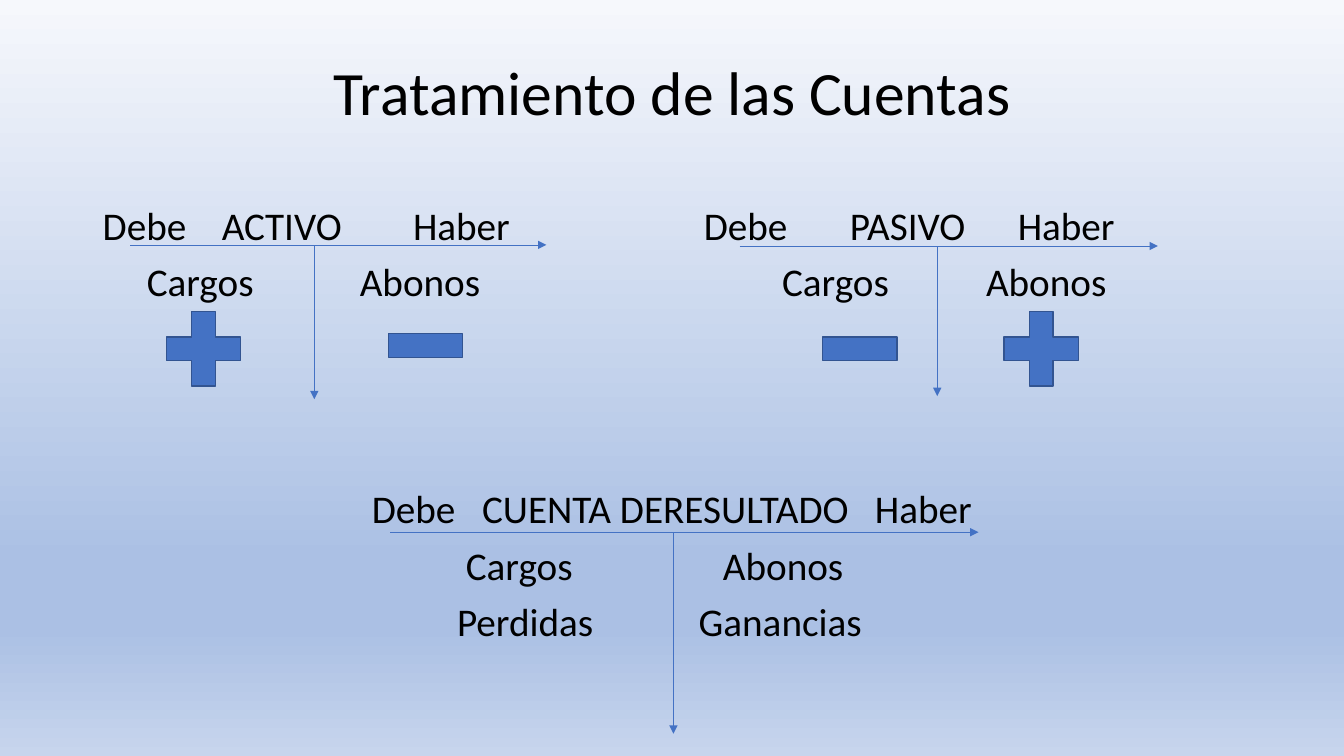
from lxml.etree import SubElement
from pptx import Presentation
from pptx.dml.color import RGBColor
from pptx.enum.shapes import MSO_CONNECTOR, MSO_SHAPE as Shape
from pptx.enum.text import MSO_ANCHOR as Anchor, PP_ALIGN as Align
from pptx.oxml.ns import qn
from pptx.util import Cm, Pt

COLORS = {"text": "000000", "accent": "4472C4", "edge": "325491"}
BACKDROP = [(0, "F6F8FC"), (74, "ABC0E4"), (83, "ABC0E4"), (100, "C7D5ED")]
BODY_LEFT, INSET = 2.34, 0.25

# Each row: space before in points, then words with their distance from the slide's left edge
ROWS = [
    (10, [(2.59, "Debe"), (5.59, "ACTIVO"), (10.41, "Haber"),
          (17.74, "Debe"), (21.42, "PASIVO"), (25.65, "Haber")]),
    (10, [(3.7, "Cargos"), (9.07, "Abonos"), (19.71, "Cargos"), (24.85, "Abonos")]),
    (132, [(9.37, "Debe"), (12.15, "CUENTA DERESULTADO"), (22.05, "Haber")]),
    (10, [(11.74, "Cargos"), (18.22, "Abonos")]),
    (10, [(11.52, "Perdidas"), (17.61, "Ganancias")]),
]
# Each account: bar left, bar right, bar height on the slide, stem position, stem end
ACCOUNTS = [
    (3.28, 13.77, 6.17, 7.92, 10.06),
    (18.64, 29.18, 6.2, 23.62, 9.98),
    (9.83, 24.66, 13.41, 16.97, 18.49),
]
SIGNS = [
    (Shape.MATH_PLUS, 3.86, 7.52), (Shape.MATH_MINUS, 9.45, 7.44),
    (Shape.MATH_PLUS, 24.97, 7.52), (Shape.MATH_MINUS, 20.4, 7.52),
]


def apply(target, values):
    for name, value in values.items():
        setattr(target, name, value)


def rgb(name):
    return RGBColor.from_string(COLORS[name])


class AccountSlide:
    font = "Calibri"

    def __init__(self, deck):
        self.page = deck.slides.add_slide(deck.slide_layouts[5])

    def background(self, stops):
        fill = self.page.background.fill
        fill.gradient()
        fill.gradient_angle = 270
        stop_list = next(self.page.element.iter(qn("a:gsLst")))
        for old in list(stop_list):
            stop_list.remove(old)
        for percent, color in stops:
            stop = SubElement(stop_list, qn("a:gs"), pos=str(percent * 1000))
            SubElement(stop, qn("a:srgbClr"), val=color)

    def add_text(self, para, text, size, before=0):
        apply(para, {"line_spacing": 0.9, "space_before": Pt(before)})
        span = para.add_run()
        span.text = text
        apply(span.font, {"name": self.font, "size": Pt(size)})
        span.font.color.rgb = rgb("text")

    def title(self, text):
        box = self.page.shapes.title
        apply(box, {"left": Cm(2.34), "top": Cm(1.02), "width": Cm(29.21), "height": Cm(2.79)})
        box.text_frame.vertical_anchor = Anchor.MIDDLE
        para = box.text_frame.paragraphs[0]
        para.alignment = Align.CENTER
        self.add_text(para, text, 44)

    def body(self, rows):
        box = self.page.shapes.add_textbox(Cm(BODY_LEFT), Cm(5.08), Cm(29.21), Cm(12.98))
        frame = box.text_frame
        frame.word_wrap = True
        for index, (before, words) in enumerate(rows):
            para = frame.add_paragraph() if index else frame.paragraphs[0]
            offsets = [round(x - BODY_LEFT - INSET, 2) for x, _ in words]
            parts = [("\t" if offset > 0 else "") + word
                     for offset, (_, word) in zip(offsets, words)]
            self.add_text(para, "".join(parts), 28, before)
            # Tab stops hold the words in their columns
            tabs = SubElement(para._p.get_or_add_pPr(), qn("a:tabLst"))
            for offset in offsets:
                if offset > 0:
                    SubElement(tabs, qn("a:tab"), pos=str(int(Cm(offset))), algn="l")

    def arrow(self, *ends):
        line = self.page.shapes.add_connector(MSO_CONNECTOR.STRAIGHT, *map(Cm, ends))
        line.line.color.rgb = rgb("accent")
        line.line.width = Pt(0.5)
        outline = line._element.spPr
        SubElement(outline.find(qn("a:ln")), qn("a:tailEnd"), type="triangle")
        SubElement(outline, qn("a:effectLst"))

    def account(self, left, right, top, stem, bottom):
        self.arrow(left, top, right, top)
        self.arrow(stem, top + 0.03, stem, bottom)

    def sign(self, kind, left, top):
        shape = self.page.shapes.add_shape(kind, Cm(left), Cm(top), Cm(2.54), Cm(2.54))
        shape.shadow.inherit = False
        shape.fill.solid()
        shape.fill.fore_color.rgb = rgb("accent")
        shape.line.color.rgb = rgb("edge")
        shape.line.width = Pt(1)


def main():
    deck = Presentation()
    apply(deck, {"slide_width": Cm(33.87), "slide_height": Cm(19.05)})
    slide = AccountSlide(deck)
    slide.background(BACKDROP)

    # Title and account wording
    slide.title("Tratamiento de las Cuentas")
    slide.body(ROWS)

    # T accounts and their signs
    for account in ACCOUNTS:
        slide.account(*account)
    for sign in SIGNS:
        slide.sign(*sign)
    deck.save("out.pptx")


if __name__ == "__main__":
    main()
